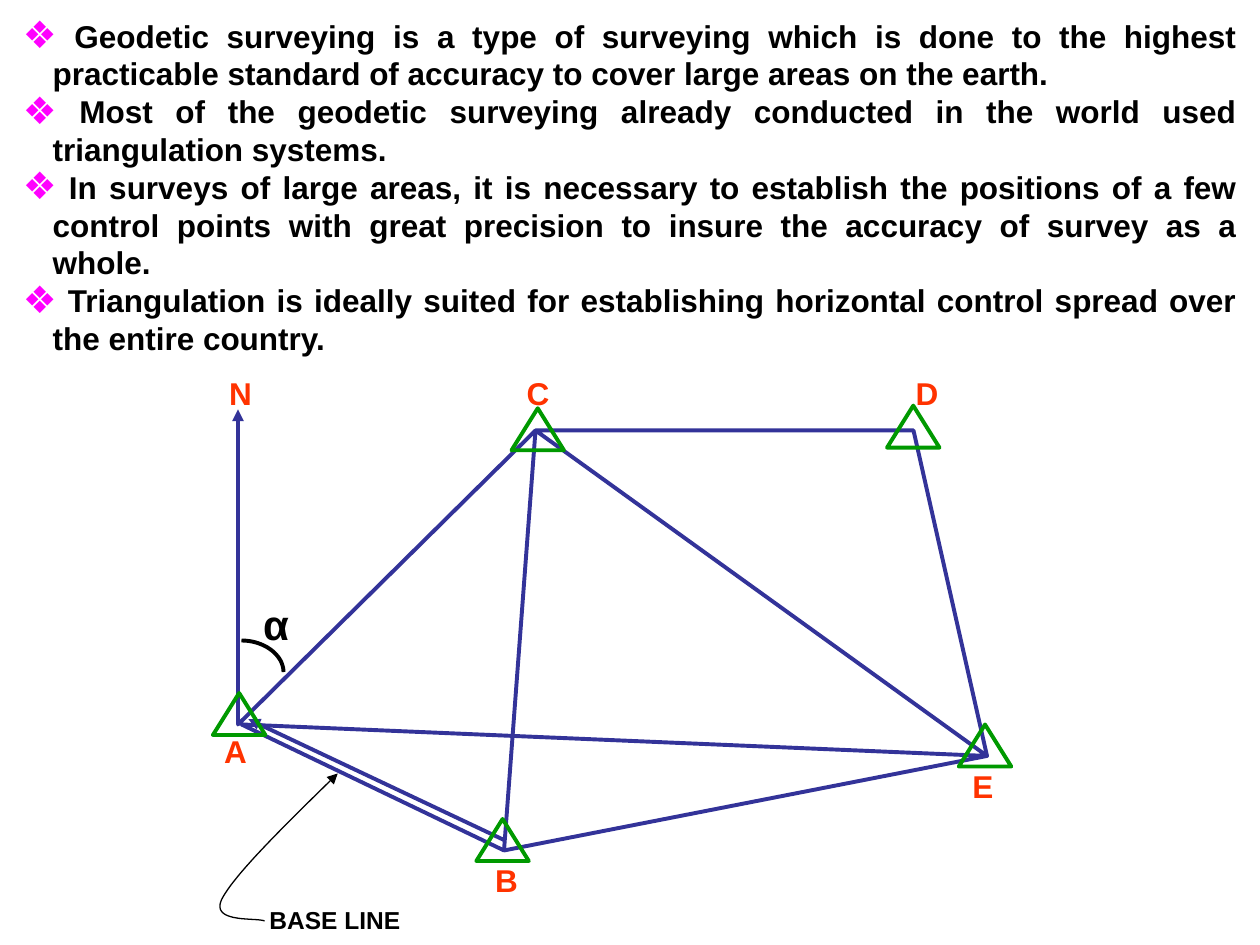
from typing import NamedTuple

from lxml import etree
from pptx import Presentation
from pptx import util as u
from pptx.dml.color import RGBColor
from pptx.enum import shapes, text
from pptx.oxml import ns

Point = tuple[float, float]
Pt = u.Pt
FONT = "Arial"
BLACK, BLUE, GREEN, RED, PINK = "000000", "333399", "009900", "FF3300", "FF00FF"


class Label(NamedTuple):
    words: str
    left: float
    top: float
    width: float = 27
    height: float = 29
    size: float = 18
    color: str = RED


class Station(NamedTuple):
    vertex: Point
    marker: Point
    label: Label


def rgb(value: str) -> RGBColor:
    return RGBColor.from_string(value)


def add_child(parent, tag: str, **attributes: str):
    return etree.SubElement(parent, ns.qn(tag), attributes)


def style_line(line, color: str, width: float, arrow: bool = False) -> None:
    line.color.rgb = rgb(color)
    line.width = Pt(width)
    if arrow:
        add_child(line._get_or_add_ln(), "a:headEnd", type="triangle")


def add_span(para, words: str, size: float, color: str) -> None:
    span = para.add_run()
    span.text = words
    span.font.name = FONT
    span.font.size = Pt(size)
    span.font.bold = True
    span.font.color.rgb = rgb(color)


def add_label(page, label: Label) -> None:
    box = page.shapes.add_textbox(Pt(label.left), Pt(label.top), Pt(label.width), Pt(label.height))
    box.text_frame.word_wrap = False
    box.text_frame.auto_size = text.MSO_AUTO_SIZE.SHAPE_TO_FIT_TEXT
    add_span(box.text_frame.paragraphs[0], label.words, label.size, label.color)


def add_marker(page, corner: Point) -> None:
    left, top = corner
    marker = page.shapes.add_shape(
        shapes.MSO_SHAPE.ISOSCELES_TRIANGLE, Pt(left), Pt(top), Pt(30), Pt(24))
    marker.shadow.inherit = False
    marker.fill.background()
    style_line(marker.line, GREEN, 2.25)


def add_path(page, points: list[Point], color: str, width: float, arrow: bool = False) -> None:
    start, *rest = [(Pt(x), Pt(y)) for x, y in points]
    builder = page.shapes.build_freeform(*start)
    builder.add_line_segments(rest, close=False)
    outline = builder.convert_to_shape()
    outline.shadow.inherit = False
    outline.fill.background()
    style_line(outline.line, color, width, arrow)


def curve(p0: Point, p1: Point, p2: Point, p3: Point, steps: int = 24) -> list[Point]:
    """Points along a cubic Bezier curve."""
    points = []
    for step in range(steps + 1):
        t = step / steps
        weights = ((1 - t) ** 3, 3 * t * (1 - t) ** 2, 3 * t * t * (1 - t), t ** 3)
        points.append(tuple(sum(w * p[axis] for w, p in zip(weights, (p0, p1, p2, p3)))
                            for axis in (0, 1)))
    return points


def add_bullets(page, bullets: list[str]) -> None:
    box = page.shapes.add_textbox(Pt(6), Pt(6), Pt(708), Pt(180))
    frame = box.text_frame
    frame.word_wrap = True
    frame.auto_size = text.MSO_AUTO_SIZE.SHAPE_TO_FIT_TEXT
    for index, words in enumerate(bullets):
        para = frame.add_paragraph() if index else frame.paragraphs[0]
        para.alignment = text.PP_ALIGN.JUSTIFY
        props = para._p.get_or_add_pPr()
        props.set("marL", str(Pt(17)))
        props.set("indent", str(-Pt(17)))
        add_child(add_child(props, "a:buClr"), "a:srgbClr", val=PINK)
        add_child(props, "a:buSzPct", val="120000")
        add_child(props, "a:buFont", typeface=FONT)
        add_child(props, "a:buChar", char="❖")
        add_span(para, words, 18, BLACK)


BULLETS = [
    " Geodetic surveying is a type of surveying which is done to the highest practicable"
    " standard of accuracy to cover large areas on the earth. ",
    " Most of the geodetic surveying already conducted in the world used triangulation systems. ",
    " In surveys of large areas, it is necessary to establish the positions of a few control"
    " points with great precision to insure the accuracy of survey as a whole. ",
    " Triangulation is ideally suited for establishing horizontal control spread over the"
    " entire country.",
]
STATIONS = {
    "A": Station((138, 414), (121.7, 396), Label("A", 121, 414.7)),
    "B": Station((288, 486), (272.2, 468), Label("B", 275.8, 488.2)),
    "C": Station((306, 246), (292.3, 233.3), Label("C", 293.8, 210.2)),
    "D": Station((522, 246), (506.9, 231.8), Label("D", 516.2, 210.2)),
    "E": Station((564, 432), (547.9, 414), Label("E", 548.6, 434.9)),
}
LABELS = [
    Label("N", 123.8, 210.2),
    Label("α", 143.3, 338.4, 29.5, 36, 24, BLACK),
    Label("BASE LINE", 146.9, 513.4, 89.3, 24, 14, BLACK),
]


def main() -> None:
    deck = Presentation()
    deck.slide_width, deck.slide_height = Pt(720), Pt(540)
    page = deck.slides.add_slide(deck.slide_layouts[6])
    add_bullets(page, BULLETS)

    # North arrow and triangulation network in one stroke
    north = [(136, 234), (136, 414)]
    add_path(page, north + [STATIONS[name].vertex for name in "CBAECDEB"], BLUE, 2.25, arrow=True)

    # Second stroke of the base line
    base = page.shapes.add_connector(
        shapes.MSO_CONNECTOR.STRAIGHT, Pt(142), Pt(411), Pt(288), Pt(480))
    style_line(base.line, BLUE, 2.25, arrow=True)
    add_child(base._element.spPr, "a:effectLst")

    # Stations and labels
    for station in STATIONS.values():
        add_marker(page, station.marker)
        add_label(page, station.label)
    for label in LABELS:
        add_label(page, label)

    # Azimuth arc and base line leader
    add_path(page, curve((138, 366), (151.2, 366), (162, 374.4), (162, 384)), BLACK, 2.25)
    leader = curve((193, 442), (163.4, 471), (133.9, 499.7), (126.7, 514))
    leader += curve(leader[-1], (120.2, 527.8), (146.9, 524.2), (151.2, 526.3))[1:]
    add_path(page, leader, BLACK, 0.75, arrow=True)

    deck.save("out.pptx")


if __name__ == "__main__":
    main()
